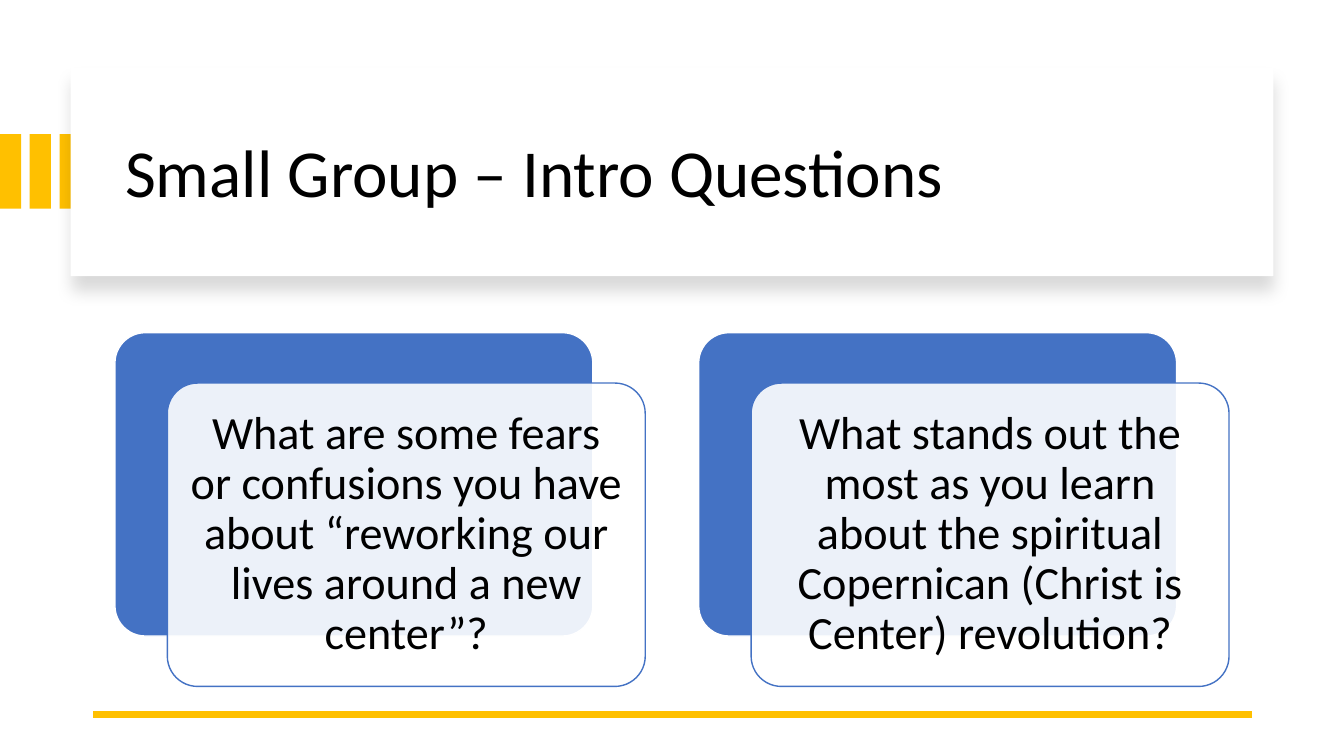
import pptx
import pptx.util
import pptx.dml.color
import pptx.enum.shapes
import pptx.enum.text
import pptx.oxml.ns
from dataclasses import dataclass
from lxml import etree

TITLE = "Small Group – Intro Questions"
QUESTIONS = [
    "What are some fears or confusions you have about “reworking our lives around a new center”?",
    "What stands out the most as you learn about the spiritual Copernican (Christ is Center) revolution?",
]


@dataclass(frozen=True)
class Theme:
    font: str = "Calibri"
    title_size: int = 48
    question_size: int = 33
    ink: str = "000000"
    paper: str = "FFFFFF"
    accent: str = "FFC000"
    card: str = "4472C4"
    hairline: float = 1
    rule: float = 4.5
    veil_opacity: int = 90


THEME = Theme()
SLIDE_WIDTH, SLIDE_HEIGHT = 13.33, 7.5
STRIPE_COUNT, STRIPE_STEP = 3, 0.295
STRIPE_TOP, STRIPE_WIDTH, STRIPE_HEIGHT = 1.33, 0.21, 0.74
PANEL = (0.7, 0.67, 11.93, 2.07)
TITLE_BOX = (1.14, 0.89, 11.13, 1.7)
CARD_LEFT, CARD_TOP, CARD_STEP = 1.14, 3.3, 5.79
CARD_WIDTH, CARD_HEIGHT = 4.74, 3.01
VEIL_SHIFT = (0.52, 0.5)
TEXT_MARGIN, TEXT_INSET = 0.09, 0.14
RULE_LEFT, RULE_RIGHT, RULE_TOP = 0.92, 12.42, 7.09

Inches = pptx.util.Inches
Shapes = pptx.enum.shapes.MSO_SHAPE
Align = pptx.enum.text.PP_ALIGN
qualified = pptx.oxml.ns.qn


def color(value):
    return pptx.dml.color.RGBColor.from_string(value)


def add_alpha(color_element, opacity):
    etree.SubElement(color_element, qualified("a:alpha"), val=str(opacity * 1000))


def add_block(slide, kind, box, fill, line=None, opacity=100):
    shape = slide.shapes.add_shape(kind, *map(Inches, box))
    shape.fill.solid()
    shape.fill.fore_color.rgb = color(fill)
    if line:
        shape.line.color.rgb = color(line)
        shape.line.width = pptx.util.Pt(THEME.hairline)
    else:
        shape.line.fill.background()
    if kind == Shapes.ROUNDED_RECTANGLE:
        shape.adjustments[0] = 0.1
    if opacity < 100:
        solid_fill = shape.element.spPr.find(qualified("a:solidFill"))
        add_alpha(solid_fill[0], opacity)
    shape.shadow.inherit = False
    return shape


def add_soft_shadow(shape, opacity, blur, distance):
    effects = shape.element.spPr.find(qualified("a:effectLst"))
    shadow = etree.SubElement(
        effects, qualified("a:outerShdw"),
        blurRad=str(pptx.util.Pt(blur)), dist=str(pptx.util.Pt(distance)),
        dir="5400000", algn="t", rotWithShape="0")
    tint = etree.SubElement(shadow, qualified("a:srgbClr"), val=THEME.ink)
    add_alpha(tint, opacity)


def write_text(shape, text, size, align, inset_x=0.1, inset_y=0.05):
    frame = shape.text_frame
    frame.word_wrap = True
    frame.auto_size = pptx.enum.text.MSO_AUTO_SIZE.NONE
    frame.vertical_anchor = pptx.enum.text.MSO_ANCHOR.MIDDLE
    frame.margin_left = frame.margin_right = Inches(inset_x)
    frame.margin_top = frame.margin_bottom = Inches(inset_y)
    paragraph = frame.paragraphs[0]
    paragraph.alignment = align
    paragraph.line_spacing = 0.9
    run = paragraph.add_run()
    run.text = text
    run.font.name = THEME.font
    run.font.size = pptx.util.Pt(size)
    run.font.color.rgb = color(THEME.ink)


def add_header(slide):
    for index in range(STRIPE_COUNT):
        box = (index * STRIPE_STEP, STRIPE_TOP, STRIPE_WIDTH, STRIPE_HEIGHT)
        add_block(slide, Shapes.RECTANGLE, box, THEME.accent)
    panel = add_block(slide, Shapes.RECTANGLE, PANEL, THEME.paper)
    add_soft_shadow(panel, opacity=15, blur=11, distance=10)
    title = slide.shapes.title
    title.left, title.top, title.width, title.height = map(Inches, TITLE_BOX)
    write_text(title, TITLE, THEME.title_size, Align.LEFT)
    panel.element.addnext(title.element)


def add_rule(slide):
    rule = slide.shapes.add_connector(
        pptx.enum.shapes.MSO_CONNECTOR.STRAIGHT,
        *map(Inches, (RULE_RIGHT, RULE_TOP, RULE_LEFT, RULE_TOP)))
    rule.line.color.rgb = color(THEME.accent)
    rule.line.width = pptx.util.Pt(THEME.rule)
    etree.SubElement(rule.element.spPr, qualified("a:effectLst"))


def add_question(slide, column, question):
    left = CARD_LEFT + column * CARD_STEP
    veil_left, veil_top = left + VEIL_SHIFT[0], CARD_TOP + VEIL_SHIFT[1]
    add_block(slide, Shapes.ROUNDED_RECTANGLE, (left, CARD_TOP, CARD_WIDTH, CARD_HEIGHT),
              THEME.card, line=THEME.paper)
    add_block(slide, Shapes.ROUNDED_RECTANGLE, (veil_left, veil_top, CARD_WIDTH, CARD_HEIGHT),
              THEME.paper, line=THEME.card, opacity=THEME.veil_opacity)
    text_box = slide.shapes.add_textbox(*map(Inches, (
        veil_left + TEXT_MARGIN, veil_top + TEXT_MARGIN,
        CARD_WIDTH - 2 * TEXT_MARGIN, CARD_HEIGHT - 2 * TEXT_MARGIN)))
    write_text(text_box, question, THEME.question_size, Align.CENTER,
               inset_x=TEXT_INSET, inset_y=TEXT_INSET)


def main():
    presentation = pptx.Presentation()
    presentation.slide_width = Inches(SLIDE_WIDTH)
    presentation.slide_height = Inches(SLIDE_HEIGHT)
    slide = presentation.slides.add_slide(presentation.slide_layouts[5])
    slide.background.fill.solid()
    slide.background.fill.fore_color.rgb = color(THEME.paper)
    add_header(slide)
    add_rule(slide)
    for column, question in enumerate(QUESTIONS):
        add_question(slide, column, question)
    presentation.save("out.pptx")


if __name__ == "__main__":
    main()
